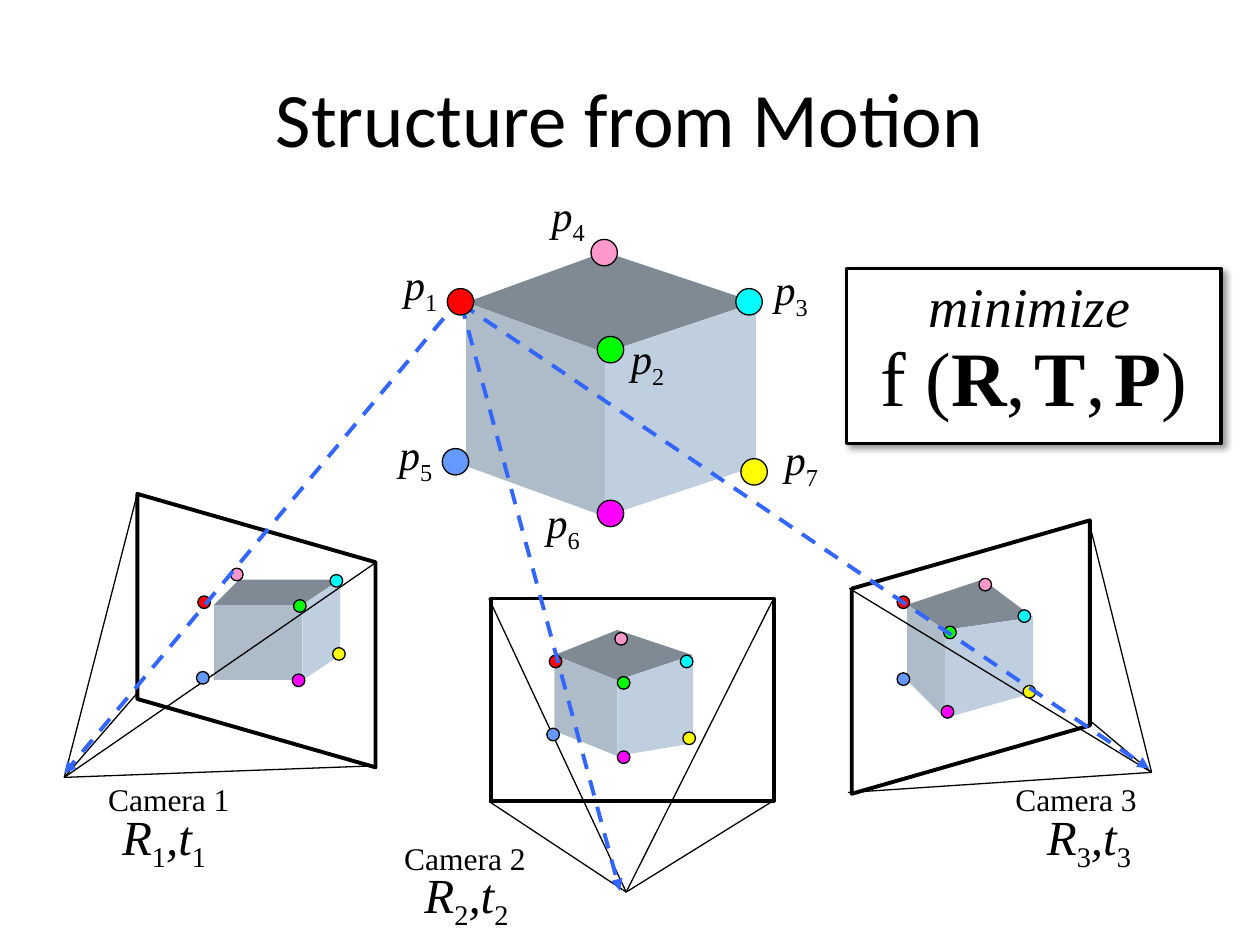
from pptx import Presentation
from pptx import util as u
from pptx.dml.color import RGBColor
from pptx.enum import dml, shapes, text
from pptx.oxml import parse_xml
from pptx.oxml.ns import nsdecls, qn

COLORS = {
    "ink": "000000", "paper": "FFFFFF", "sight": "3366FF",
    "top": "808A94", "left": "AEBBC8", "right": "C0CFDF",
    "p1": "FF0101", "p2": "00FF00", "p3": "00FFFF", "p4": "FF99CC",
    "p5": "6699FF", "p6": "FF00FF", "p7": "FFFF00",
}
RGB = {name: RGBColor.from_string(value) for name, value in COLORS.items()}

deck = Presentation()
deck.slide_width, deck.slide_height = u.Inches(10), u.Inches(7.5)
slide = deck.slides.add_slide(deck.slide_layouts[6])
canvas = slide.shapes
# All places are in cells of a grid with 100 columns and 75 rows.
CELL = deck.slide_width // 100

ROMAN = {"name": "Times New Roman", "italic": False, "bold": False}
ITALIC = {**ROMAN, "italic": True}
BOLD = {**ROMAN, "bold": True}


def write(box, runs, align=text.PP_ALIGN.LEFT):
    """Put one line of (words, size, font, baseline) runs in a box of cells."""
    frame = canvas.add_textbox(*(int(n * CELL) for n in box)).text_frame
    frame.word_wrap = False
    frame.vertical_anchor = text.MSO_ANCHOR.MIDDLE
    line = frame.paragraphs[0]
    line.alignment = align
    for words, size, font, baseline in runs:
        run = line.add_run()
        run.text = words
        run.font.color.rgb = RGB["ink"]
        for key, value in {**font, "size": u.Pt(size)}.items():
            setattr(run.font, key, value)
        if baseline:
            run.font._element.set("baseline", str(baseline * 1000))


def connect(start, end, color="ink", width=0.75, arrow=False):
    line = canvas.add_connector(
        shapes.MSO_CONNECTOR.STRAIGHT, *(int(n * CELL) for n in start + end))
    line.line.color.rgb = RGB[color]
    line.line.width = u.Pt(width)
    if arrow:
        line.line.dash_style = dml.MSO_LINE.DASH
        line.line._get_or_add_ln().append(
            parse_xml(f'<a:tailEnd {nsdecls("a")} type="triangle"/>'))
    line._element.spPr.append(parse_xml(f'<a:effectLst {nsdecls("a")}/>'))


# Image planes of the three cameras
FRAMES = [
    (shapes.MSO_SHAPE.PARALLELOGRAM, (9.5, 40.6, 21.7, 18.9), 90),
    (shapes.MSO_SHAPE.RECTANGLE, (39, 47.5, 22.4, 16.1), 0),
    (shapes.MSO_SHAPE.PARALLELOGRAM, (66.2, 42.7, 21.7, 18.9), 270),
]
for kind, box, turn in FRAMES:
    plane = canvas.add_shape(kind, *(int(n * CELL) for n in box))
    plane.shadow.inherit = False
    plane.fill.background()
    plane.line.color.rgb = RGB["ink"]
    plane.line.width = u.Pt(2.25)
    plane.rotation = turn
    if turn:
        plane.adjustments[0] = 0.287
    if turn == 270:
        plane._element.spPr.find(qn("a:xfrm")).set("flipH", "1")

# Cube corners p1 to p7 as seen in the world and by each camera
CUBES = [
    [(36.6, 24.1), (48, 27.8), (59.5, 24), (48, 20.2), (36.6, 37.3), (48, 41), (59.5, 37.4)],
    [(16.6, 47.8), (23.8, 48), (26.6, 45.8), (19, 45.5), (16.6, 54.1), (23.8, 54.3), (26.6, 51.8)],
    [(43.9, 52.2), (49.2, 54), (54.6, 52.2), (49.2, 50.4), (43.9, 58.4), (49.2, 60.3), (54.6, 58.6)],
    [(71.7, 47.8), (75.2, 50.3), (81.6, 48.9), (78.2, 46.3), (71.7, 54.1), (75.2, 56.6), (81.6, 55.3)],
]
FACES = {"top": (1, 2, 3, 4), "left": (1, 2, 6, 5), "right": (2, 3, 7, 6)}
for corners in CUBES:
    for face, numbers in FACES.items():
        first, *rest = [corners[n - 1] for n in numbers]
        outline = canvas.build_freeform(*first, scale=CELL)
        outline.add_line_segments(rest)
        side = outline.convert_to_shape()
        side.shadow.inherit = False
        side.fill.solid()
        side.fill.fore_color.rgb = RGB[face]
        side.line.fill.background()

# Edges from each camera centre to the corners of its image plane
PYRAMIDS = {
    (5.1, 61.7): [(10.9, 39.2), (10.9, 55), (29.9, 44.6), (29.2, 60.8)],
    (49.7, 70.8): [(38.8, 47.5), (61.3, 47.7), (38.8, 63.6), (61.3, 63.6)],
    (91.4, 61.3): [(67.4, 46.7), (67.3, 62.9), (86.4, 57.1), (86.4, 41.3)],
}
for centre, plane_corners in PYRAMIDS.items():
    for corner in plane_corners:
        connect(corner, centre)

# Camera names and poses: left and top of each
CAMERAS = [((7.6, 61.4), (8.7, 63.8)), ((31.1, 66.1), (32.7, 68.4)),
           ((79.6, 61.4), (82.1, 63.8))]
for number, (name_at, pose_at) in enumerate(CAMERAS, 1):
    write((*name_at, 13, 4), [(f"Camera {number}", 18, ROMAN, 0)])
    write((*pose_at, 9.8, 5.7), [
        ("R", 28, ITALIC, 0), (str(number), 28, ROMAN, -25),
        (",t", 28, ITALIC, 0), (str(number), 28, ROMAN, -25)])

POINT_LABELS = [(31.1, 20.3), (49.1, 26.2), (60.5, 20.7), (42.8, 14.8),
                (30.7, 33.8), (42.4, 39.2), (61.3, 34.2)]
for number, place in enumerate(POINT_LABELS, 1):
    write((*place, 5.9, 5), [("p", 24, ITALIC, 0), (str(number), 24, ROMAN, -25)])

# Points p1 to p7 (left, top) with their size; the world points lie on the sight lines
DOTS = [
    (1, [(15.7, 47.3), (23.3, 47.6), (26.2, 45.6), (18.3, 45.1), (15.6, 53.3), (23.2, 53.5), (26.4, 51.4)]),
    (1, [(43.6, 52), (49, 53.7), (54, 52), (48.8, 50.2), (43.4, 57.8), (49, 59.6), (54.2, 58.1)]),
    (1, [(71.2, 47.3), (74.9, 49.7), (80.8, 48.4), (77.7, 45.9), (71.2, 53.4), (74.7, 56), (81.2, 54.4)]),
    (2.1, [(35.5, 22.9), (47.4, 26.7), (58.4, 22.9), (46.9, 19), (35.1, 35.6), (47.4, 39.7), (58.8, 36.4)]),
]
SIGHT_LINES = [((36.6, 23.6), (5.1, 61.4)), ((36.6, 24.1), (49.2, 70.7)),
               ((36.6, 24.1), (91.2, 61))]
for size, places in DOTS:
    if size > 1:
        for start, end in SIGHT_LINES:
            connect(start, end, "sight", 2.25, arrow=True)
    for number, place in enumerate(places, 1):
        dot = canvas.add_shape(
            shapes.MSO_SHAPE.OVAL, *(int(n * CELL) for n in (*place, size, size)))
        dot.shadow.inherit = False
        dot.fill.solid()
        dot.fill.fore_color.rgb = RGB[f"p{number}"]
        dot.line.color.rgb = RGB["ink"]
        dot.line.width = u.Pt(0.75)

# Objective function
goal = canvas.add_shape(
    shapes.MSO_SHAPE.RECTANGLE, *(int(n * CELL) for n in (67.2, 21.3, 29.7, 13.9)))
goal.fill.solid()
goal.fill.fore_color.rgb = RGB["paper"]
goal.line.color.rgb = RGB["ink"]
goal.line.width = u.Pt(2)
goal._element.spPr.append(parse_xml(
    f'<a:effectLst {nsdecls("a")}><a:outerShdw blurRad="{u.Pt(4)}" dist="{u.Pt(3)}" '
    f'dir="2700000" algn="tl" rotWithShape="0"><a:srgbClr val="{COLORS["ink"]}">'
    '<a:alpha val="40000"/></a:srgbClr></a:outerShdw></a:effectLst>'))
write((72.7, 21.1, 18.1, 6.3), [("minimize", 32, ITALIC, 0)])
write((68.9, 25.7, 26.3, 8.3), [
    ("f (", 44, ROMAN, 0), ("R", 44, BOLD, 0), (",", 44, ROMAN, 0), (" ", 20, ROMAN, 0),
    ("T", 44, BOLD, 0), (",", 44, ROMAN, 0), (" ", 20, ROMAN, 0),
    ("P", 44, BOLD, 0), (")", 44, ROMAN, 0)])

write((5, 3, 90, 12.5), [("Structure from Motion", 44, {"name": "Calibri"}, 0)],
      text.PP_ALIGN.CENTER)

deck.save("out.pptx")
